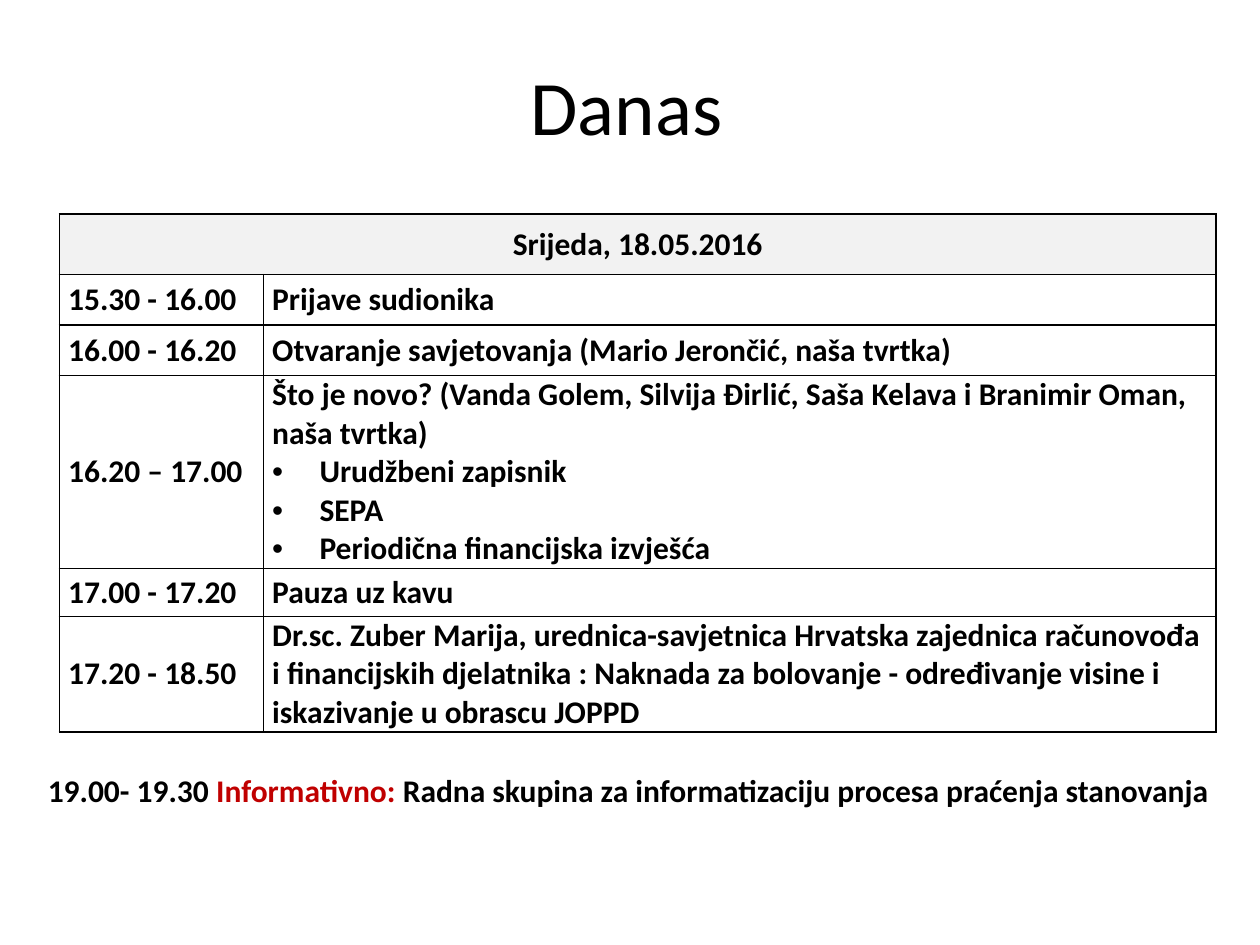
from dataclasses import dataclass

from lxml import etree
from pptx import Presentation
from pptx.dml.color import RGBColor
from pptx.enum.text import MSO_ANCHOR, MSO_AUTO_SIZE, PP_ALIGN
from pptx.oxml.ns import qn
from pptx.util import Pt

MIDDLE = MSO_ANCHOR.MIDDLE
LEFT, CENTER = PP_ALIGN.LEFT, PP_ALIGN.CENTER
GROW = MSO_AUTO_SIZE.SHAPE_TO_FIT_TEXT

BLACK, RED, WHITE, GREY = "000000", "C00000", "FFFFFF", "F2F2F2"
TITLE_FORMAT = {"name": "Calibri", "size": Pt(44), "bold": False}
TEXT_FORMAT = {"name": "Calibri", "size": Pt(18), "bold": True}
CELL_FORMAT = {"vertical_anchor": MIDDLE, "margin_left": Pt(5), "margin_right": Pt(5),
               "margin_top": 0, "margin_bottom": 0}
BULLET_INDENT = Pt(27)
COLUMN_WIDTHS = (116.6, 544.4)


@dataclass
class Session:
    time: str
    topic: str
    height: float
    points: tuple[str, ...] = ()


DAY = "Srijeda, 18.05.2016"
DAY_HEIGHT = 34.6
SESSIONS = [
    Session("15.30 - 16.00", "Prijave sudionika", 28.8),
    Session("16.00 - 16.20", "Otvaranje savjetovanja (Mario Jerončić, naša tvrtka)", 28.8),
    Session("16.20 – 17.00",
            "Što je novo? (Vanda Golem, Silvija Đirlić, Saša Kelava i Branimir Oman, naša tvrtka)",
            110.2,
            ("Urudžbeni zapisnik", "SEPA", "Periodična financijska izvješća")),
    Session("17.00 - 17.20", "Pauza uz kavu", 27.4),
    Session("17.20 - 18.50",
            "Dr.sc. Zuber Marija, urednica-savjetnica Hrvatska zajednica računovođa "
            "i financijskih djelatnika : Naknada za bolovanje - određivanje visine i "
            "iskazivanje u obrascu JOPPD", 66.2),
]
NOTE = [
    ("19.00- 19.30 ", BLACK),
    ("Informativno: ", RED),
    ("Radna skupina za informatizaciju procesa praćenja stanovanja", BLACK),
]


def color(value: str) -> RGBColor:
    return RGBColor.from_string(value)


def set_all(target, values: dict) -> None:
    for name, value in values.items():
        setattr(target, name, value)


def add_span(para, text: str, values: dict, text_color: str = BLACK) -> None:
    span = para.add_run()
    span.text = text
    set_all(span.font, values)
    span.font.color.rgb = color(text_color)


def add_bullet(para) -> None:
    properties = para._p.get_or_add_pPr()
    properties.set("marL", str(BULLET_INDENT))
    properties.set("indent", str(-BULLET_INDENT))
    etree.SubElement(properties, qn("a:buFont"), typeface="Arial")
    etree.SubElement(properties, qn("a:buChar"), char="•")


def style_cell(cell, fill: str) -> None:
    set_all(cell, CELL_FORMAT)
    properties = cell._tc.get_or_add_tcPr()
    for side in ("a:lnL", "a:lnR", "a:lnT", "a:lnB"):
        line = etree.SubElement(properties, qn(side), w=str(Pt(1)))
        paint = etree.SubElement(line, qn("a:solidFill"))
        etree.SubElement(paint, qn("a:srgbClr"), val=BLACK)
    cell.fill.solid()
    cell.fill.fore_color.rgb = color(fill)


def fill_cell(cell, text: str, align=LEFT, points: tuple[str, ...] = ()) -> None:
    para = cell.text_frame.paragraphs[0]
    para.alignment = align
    add_span(para, text, TEXT_FORMAT)
    for point in points:
        para = cell.text_frame.add_paragraph()
        add_bullet(para)
        add_span(para, point, TEXT_FORMAT)


def add_title(page, text: str) -> None:
    title = page.shapes.title
    set_all(title, {"left": Pt(34), "top": Pt(15), "width": Pt(648), "height": Pt(90)})
    title.text_frame.vertical_anchor = MIDDLE
    para = title.text_frame.paragraphs[0]
    para.alignment = CENTER
    add_span(para, text, TITLE_FORMAT)


def add_schedule(page) -> None:
    heights = [DAY_HEIGHT] + [session.height for session in SESSIONS]
    table = page.shapes.add_table(len(heights), len(COLUMN_WIDTHS), Pt(34), Pt(122.4),
                                  Pt(sum(COLUMN_WIDTHS)), Pt(sum(heights))).table
    set_all(table, {"first_row": False, "horz_banding": False})
    for column, width in zip(table.columns, COLUMN_WIDTHS):
        column.width = Pt(width)
    for index, (row, height) in enumerate(zip(table.rows, heights)):
        row.height = Pt(height)
        for cell in row.cells:
            style_cell(cell, WHITE if index else GREY)

    # Day heading across both columns, then one row per session
    table.cell(0, 0).merge(table.cell(0, 1))
    fill_cell(table.cell(0, 0), DAY, CENTER)
    for index, session in enumerate(SESSIONS, start=1):
        fill_cell(table.cell(index, 0), session.time)
        fill_cell(table.cell(index, 1), session.topic, points=session.points)


def add_note(page) -> None:
    box = page.shapes.add_textbox(Pt(20.2), Pt(437), Pt(687.6), Pt(29))
    set_all(box.text_frame, {"word_wrap": False, "auto_size": GROW})
    for text, text_color in NOTE:
        add_span(box.text_frame.paragraphs[0], text, TEXT_FORMAT, text_color)


def main() -> None:
    deck = Presentation()
    set_all(deck, {"slide_width": Pt(720), "slide_height": Pt(540)})
    page = deck.slides.add_slide(deck.slide_layouts.get_by_name("Title Only"))
    add_title(page, "Danas")
    add_note(page)
    add_schedule(page)
    deck.save("out.pptx")


if __name__ == "__main__":
    main()
